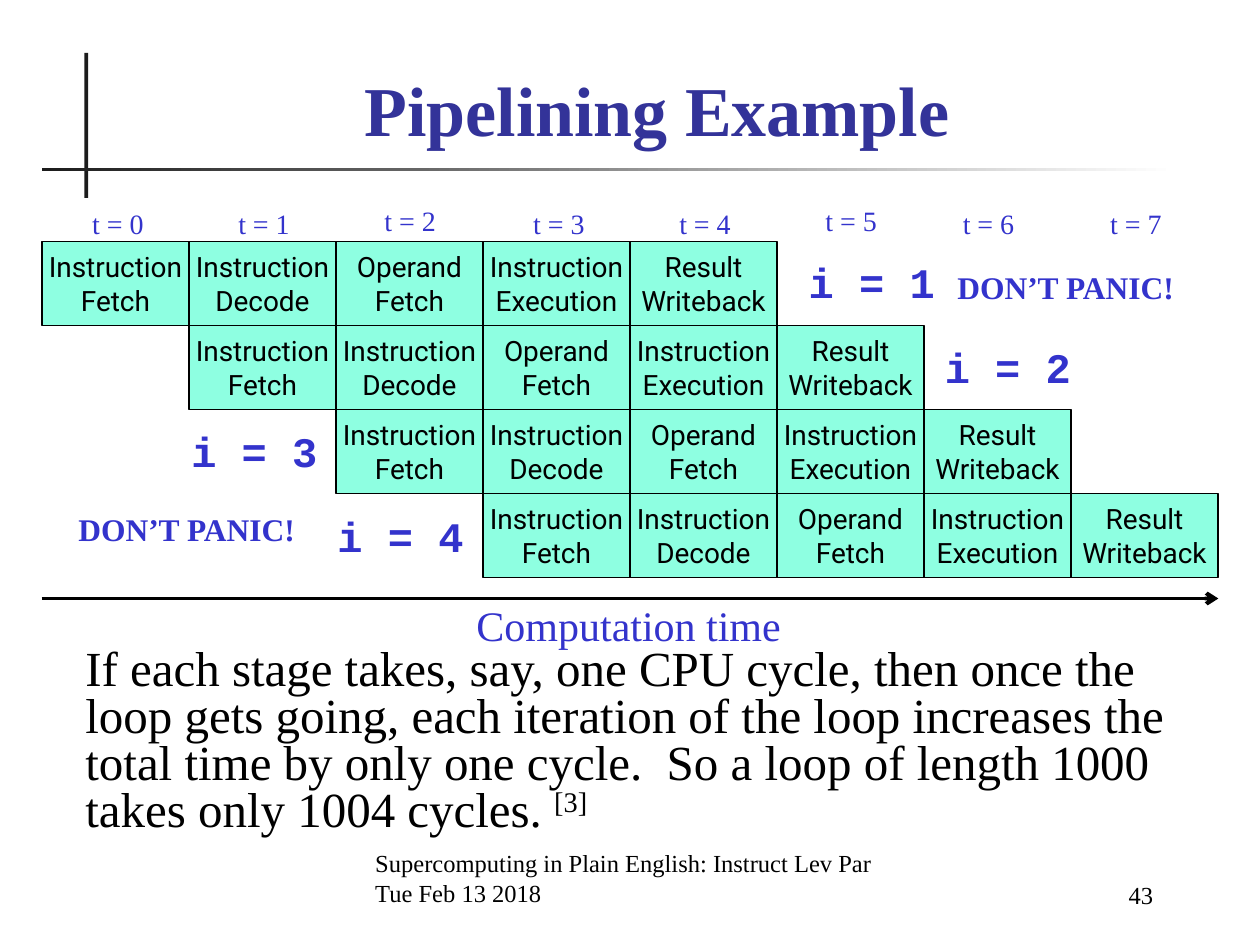
from lxml.etree import SubElement
from pptx import Presentation
from pptx.dml.color import RGBColor
from pptx.enum.shapes import MSO_CONNECTOR, MSO_SHAPE
from pptx.enum.text import MSO_ANCHOR, MSO_AUTO_SIZE, PP_ALIGN
from pptx.oxml.ns import qn
from pptx.util import Inches, Pt

BLACK = RGBColor(0x00, 0x00, 0x00)
WHITE = RGBColor(0xFF, 0xFF, 0xFF)
CHARCOAL = RGBColor(0x1C, 0x1C, 0x1C)
NAVY = RGBColor(0x33, 0x33, 0x99)
BLUE = RGBColor(0x33, 0x33, 0xCC)
MINT = RGBColor(0x8E, 0xFF, 0xE1)

SERIF = "Times New Roman"
MONO = "Courier New"
SANS = "Roboto"

STAGES = ["Instruction\nFetch", "Instruction\nDecode", "Operand\nFetch",
          "Instruction\nExecution", "Result\nWriteback"]
GRID_LEFT, GRID_TOP = 1 / 3, 23 / 12
STAGE_WIDTH, STAGE_HEIGHT = 7 / 6, 2 / 3
ITERATION_LABELS = [(6.32, 1.99), (7.4, 2.66), (1.42, 3.33), (2.58, 4)]
TIME_LABELS = [(0.63, 1.59), (1.79, 1.59), (2.95, 1.57), (4.13, 1.59),
               (5.29, 1.59), (6.45, 1.57), (7.54, 1.59), (8.71, 1.59)]
EXPLANATION = ("If each stage takes, say, one CPU cycle, then once the loop gets "
               "going, each iteration of the loop increases the total time by only "
               "one cycle.  So a loop of length 1000 takes only 1004 cycles. ")


def write(shape, text, size, color, font, bold=False, align=PP_ALIGN.LEFT,
          anchor=MSO_ANCHOR.TOP, wrap=False):
    frame = shape.text_frame
    frame.text = text
    frame.word_wrap = wrap
    frame.vertical_anchor = anchor
    for paragraph in frame.paragraphs:
        paragraph.alignment = align
        for run in paragraph.runs:
            run.font.size = Pt(size)
            run.font.name = font
            run.font.bold = bold
            run.font.color.rgb = color


def add_label(slide, box, text, size, color=BLUE, font=SERIF, wrap=False, **style):
    """Add a text box; one that does not wrap grows with its text."""
    label = slide.shapes.add_textbox(*map(Inches, box))
    write(label, text, size, color, font, wrap=wrap, **style)
    if not wrap:
        label.text_frame.auto_size = MSO_AUTO_SIZE.SHAPE_TO_FIT_TEXT
    return label


def add_box(slide, left, top, width, height):
    box = slide.shapes.add_shape(MSO_SHAPE.RECTANGLE, Inches(left), Inches(top),
                                 Inches(width), Inches(height))
    box.shadow.inherit = False
    return box


def add_title_rules(slide):
    upright = add_box(slide, 0.67, 0.42, 0.03, 1.15)
    upright.fill.solid()
    upright.fill.fore_color.rgb = CHARCOAL
    upright.line.fill.background()

    fading = add_box(slide, 0.33, 1.33, 9, 0.03)
    fading.fill.gradient()
    fading.fill.gradient_angle = 0
    for stop, color in zip(fading.fill.gradient_stops, (CHARCOAL, WHITE)):
        stop.color.rgb = color
    fading.line.fill.background()


def add_stage(slide, row, column, text):
    stage = add_box(slide, GRID_LEFT + column * STAGE_WIDTH,
                    GRID_TOP + row * STAGE_HEIGHT, STAGE_WIDTH, STAGE_HEIGHT)
    stage.fill.solid()
    stage.fill.fore_color.rgb = MINT
    stage.line.color.rgb = BLACK
    stage.line.width = Pt(0.75)
    write(stage, text, 16, BLACK, SANS, align=PP_ALIGN.CENTER,
          anchor=MSO_ANCHOR.MIDDLE)


def add_pipeline(slide):
    """Each iteration starts one time step after the one above it."""
    for row, position in enumerate(ITERATION_LABELS):
        for step, text in enumerate(STAGES):
            add_stage(slide, row, row + step, text)
        add_label(slide, (*position, 1.2, 0.5), f"i = {row + 1}", 24,
                  font=MONO, bold=True)
    for time, position in enumerate(TIME_LABELS):
        add_label(slide, (*position, 0.61, 0.37), f"t = {time}", 16,
                  align=PP_ALIGN.CENTER)


def add_time_arrow(slide):
    arrow = slide.shapes.add_connector(MSO_CONNECTOR.STRAIGHT, Inches(0.33),
                                       Inches(4.75), Inches(9.67), Inches(4.75))
    arrow.line.color.rgb = BLACK
    arrow.line.width = Pt(2.25)
    properties = arrow._element.spPr
    SubElement(properties.find(qn("a:ln")), qn("a:tailEnd"), type="arrow")
    SubElement(properties, qn("a:effectLst"))
    add_label(slide, (3.64, 4.71, 2.7, 0.5), "Computation time", 24,
              align=PP_ALIGN.CENTER)


def add_explanation(slide):
    body = add_label(slide, (0.58, 5.1, 8.83, 1.59), EXPLANATION, 28,
                     color=BLACK, wrap=True)
    paragraph = body.text_frame.paragraphs[0]
    paragraph.line_spacing = 0.8
    citation = paragraph.add_run()
    citation.text = "[3]"
    citation.font.size = Pt(28)
    citation.font.name = SERIF
    citation.font.color.rgb = BLACK
    citation._r.get_or_add_rPr().set("baseline", "30000")


def main():
    presentation = Presentation()
    presentation.slide_width = Inches(10)
    presentation.slide_height = Inches(7.5)
    slide = presentation.slides.add_slide(presentation.slide_layouts[6])

    add_title_rules(slide)
    add_label(slide, (0.83, 0.5, 8.77, 0.74), "Pipelining Example", 40, color=NAVY,
              bold=True, align=PP_ALIGN.CENTER, anchor=MSO_ANCHOR.BOTTOM, wrap=True)
    add_pipeline(slide)
    add_time_arrow(slide)
    add_explanation(slide)
    add_label(slide, (0.5, 4, 1.94, 0.4), "DON’T PANIC!", 18, bold=True,
              align=PP_ALIGN.RIGHT)
    add_label(slide, (7.5, 2.08, 1.94, 0.4), "DON’T PANIC!", 18, bold=True)
    add_label(slide, (2.88, 6.75, 4.37, 0.5),
              "Supercomputing in Plain English: Instruct Lev Par\nTue Feb 13 2018",
              14, color=BLACK, anchor=MSO_ANCHOR.BOTTOM, wrap=True)
    add_label(slide, (7.83, 6.77, 1.42, 0.5), "43", 14, color=BLACK,
              align=PP_ALIGN.RIGHT, anchor=MSO_ANCHOR.BOTTOM, wrap=True)

    presentation.save("out.pptx")


if __name__ == "__main__":
    main()
